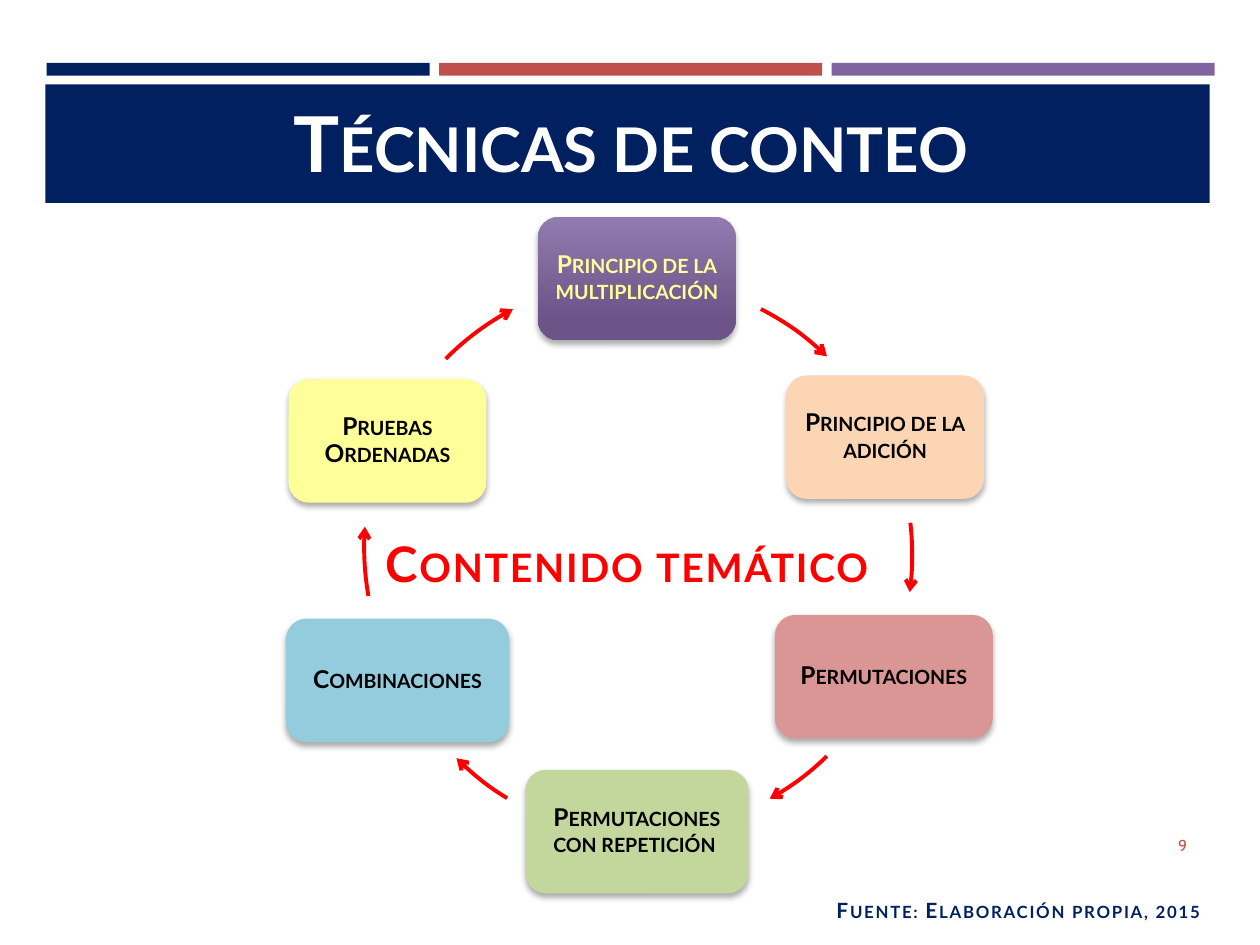
from dataclasses import dataclass

from lxml import etree
from pptx import Presentation
from pptx.dml.color import RGBColor
from pptx.enum.shapes import MSO_SHAPE
from pptx.enum.text import MSO_ANCHOR, MSO_AUTO_SIZE, PP_ALIGN
from pptx.oxml import parse_xml
from pptx.oxml.ns import nsdecls, qn
from pptx.util import Inches, Pt

RECT, ROUND, ARC = MSO_SHAPE.RECTANGLE, MSO_SHAPE.ROUNDED_RECTANGLE, MSO_SHAPE.ARC
MIDDLE = MSO_ANCHOR.MIDDLE
CENTER, RIGHT = PP_ALIGN.CENTER, PP_ALIGN.RIGHT
FIXED = MSO_AUTO_SIZE.NONE

NAVY = RGBColor(0x00, 0x20, 0x60)
BRICK = RGBColor(0xC0, 0x50, 0x4D)
PURPLE = RGBColor(0x80, 0x64, 0xA2)
LILAC = RGBColor(0x92, 0x7B, 0xAF)
PLUM = RGBColor(0x6C, 0x54, 0x88)
PEACH = RGBColor(0xFC, 0xD5, 0xB5)
ROSE = RGBColor(0xD9, 0x96, 0x94)
GREEN = RGBColor(0xC3, 0xD6, 0x9B)
SKY = RGBColor(0x93, 0xCD, 0xDD)
YELLOW = RGBColor(0xFF, 0xFF, 0x99)
RED = RGBColor(0xFF, 0x00, 0x00)
BLACK = RGBColor(0x00, 0x00, 0x00)
WHITE = RGBColor(0xFF, 0xFF, 0xFF)

BOX_H = 0.98
INSET = 0.05
RING = 4.39
BAR_W, BAR_STEP = 3.04, 3.115
SHADOW = (
    f'<a:effectLst {nsdecls("a")}><a:outerShdw blurRad="44450" dist="27940" '
    'dir="5400000" algn="ctr" rotWithShape="0"><a:srgbClr val="000000">'
    '<a:alpha val="32000"/></a:srgbClr></a:outerShdw></a:effectLst>'
)


@dataclass
class Step:
    """A topic box and the arc, in degrees, that leads on to the next."""
    text: str
    left: float
    top: float
    width: float
    fills: tuple[RGBColor, ...]
    ring: tuple[float, float]
    start: float
    end: float
    ink: RGBColor = BLACK


@dataclass
class Label:
    text: str
    area: tuple[float, float, float, float]
    size: float
    color: RGBColor
    font: str = "Lato"
    bold: bool = True
    caps: bool = True
    track: int = 100
    align: PP_ALIGN = CENTER


STEPS = [
    Step("Principio de la multiplicación", 4.27, 1.72, 1.57, (LILAC, PLUM),
         (2.84, 2.21), 297.2, 314.1, YELLOW),
    Step("Principio de la adición", 6.24, 2.98, 1.57, (PEACH,),
         (2.85, 2.21), 353.3, 7.7),
    Step("Permutaciones", 6.15, 4.88, 1.73, (ROSE,), (2.84, 2.23), 45.9, 60.7),
    Step("Permutaciones con repetición ", 4.17, 6.11, 1.77, (GREEN,),
         (2.98, 2.27), 121.6, 135),
    Step("Combinaciones", 2.27, 4.91, 1.77, (SKY,), (2.89, 2.15), 169.9, 184.3),
    Step("Pruebas Ordenadas", 2.29, 3.01, 1.57, (YELLOW,),
         (2.9, 2.2), 224.8, 242.2),
]
LABELS = [
    Label("Fuente: Elaboración propia, 2015", (6.54, 7.07, 3.3, 0.3), 12, NAVY),
    Label("Contenido temático", (2.96, 4.18, 4.2, 0.57), 28, RED),
    Label("9", (8.66, 6.51, 0.86, 0.4), 9, BRICK, "Cabin", False, False, 0, RIGHT),
]


def write(shape, label: Label, **frame) -> None:
    """Fill a shape with one formatted paragraph."""
    tf = shape.text_frame
    form = {"word_wrap": True, "auto_size": FIXED, "vertical_anchor": MIDDLE}
    for name, value in (form | frame).items():
        setattr(tf, name, value)
    para = tf.paragraphs[0]
    para.alignment = label.align
    run = para.add_run()
    run.text = label.text
    form = {"name": label.font, "size": Pt(label.size), "bold": label.bold}
    for name, value in form.items():
        setattr(run.font, name, value)
    run.font.color.rgb = label.color
    props = run._r.get_or_add_rPr()
    if label.caps:
        props.set("cap", "small")
    if label.track:
        props.set("spc", str(label.track))


def add_bar(slide, area: tuple[float, ...], color: RGBColor) -> None:
    bar = slide.shapes.add_shape(RECT, *map(Inches, area))
    bar.shadow.inherit = False
    bar.fill.solid()
    bar.fill.fore_color.rgb = color
    bar.line.fill.background()


def add_box(slide, step: Step) -> None:
    area = (step.left, step.top, step.width, BOX_H)
    box = slide.shapes.add_shape(ROUND, *map(Inches, area))
    if len(step.fills) > 1:
        box.fill.gradient()
        box.fill.gradient_angle = 270
        for stop, color, place in zip(box.fill.gradient_stops, step.fills, (0, 0.84)):
            stop.color.rgb = color
            stop.position = place
    else:
        box.fill.solid()
        box.fill.fore_color.rgb = step.fills[0]
    box.line.fill.background()
    box.element.spPr.append(parse_xml(SHADOW))
    sides = ("left", "top", "right", "bottom")
    inset = {f"margin_{side}": Inches(INSET) for side in sides}
    write(box, Label(step.text, area, 14, step.ink, track=0), **inset)
    box.text_frame.paragraphs[0].line_spacing = 0.9


def add_arc(slide, step: Step) -> None:
    arc = slide.shapes.add_shape(ARC, *map(Inches, (*step.ring, RING, RING)))
    arc.shadow.inherit = False
    # An adjustment of 1 is 100000 units; a degree is 60000.
    arc.adjustments[0] = step.start * 0.6
    arc.adjustments[1] = step.end * 0.6
    arc.fill.background()
    arc.line.color.rgb = RED
    arc.line.width = Pt(2.25)
    line = arc.element.spPr.find(qn("a:ln"))
    etree.SubElement(line, qn("a:tailEnd")).set("type", "arrow")


def main() -> None:
    deck = Presentation()
    deck.slide_width, deck.slide_height = Inches(10), Inches(7.5)
    slide = deck.slides.add_slide(deck.slide_layouts[5])

    for i, color in enumerate((NAVY, BRICK, PURPLE)):
        add_bar(slide, (0.37 + i * BAR_STEP, 0.5, BAR_W, 0.1), color)
    add_bar(slide, (0.36, 0.67, 9.24, 0.94), NAVY)

    title = slide.shapes.title
    head = Label("Técnicas de conteo", (0.48, 0.66, 9.05, 0.93), 44, WHITE, track=0)
    for name, value in zip(("left", "top", "width", "height"), head.area):
        setattr(title, name, Inches(value))
    write(title, head)
    title.element.getparent().append(title.element)  # in front of the band

    for step in STEPS:
        add_box(slide, step)
        add_arc(slide, step)
    for label in LABELS:
        write(slide.shapes.add_textbox(*map(Inches, label.area)), label)

    deck.save("out.pptx")


if __name__ == "__main__":
    main()
